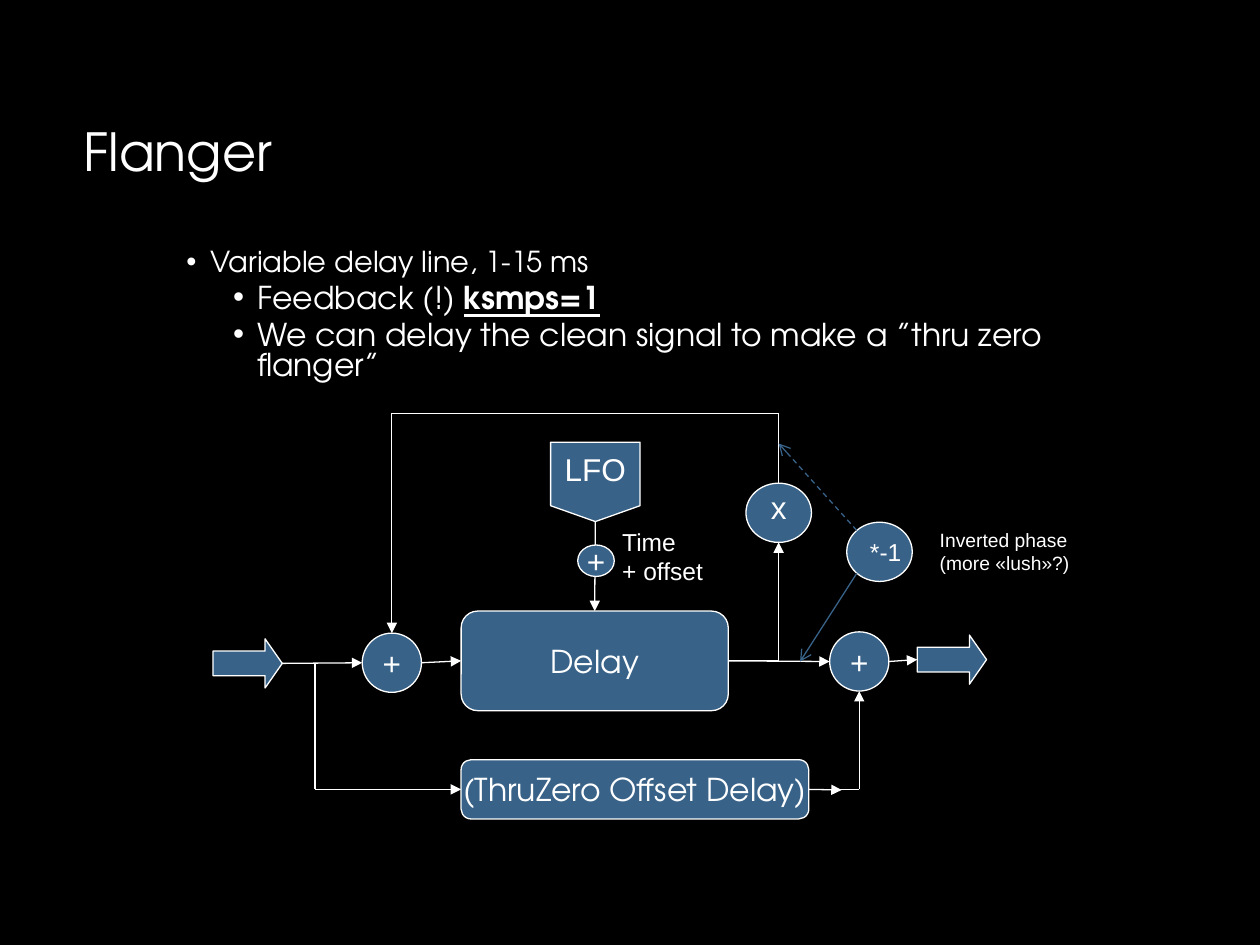
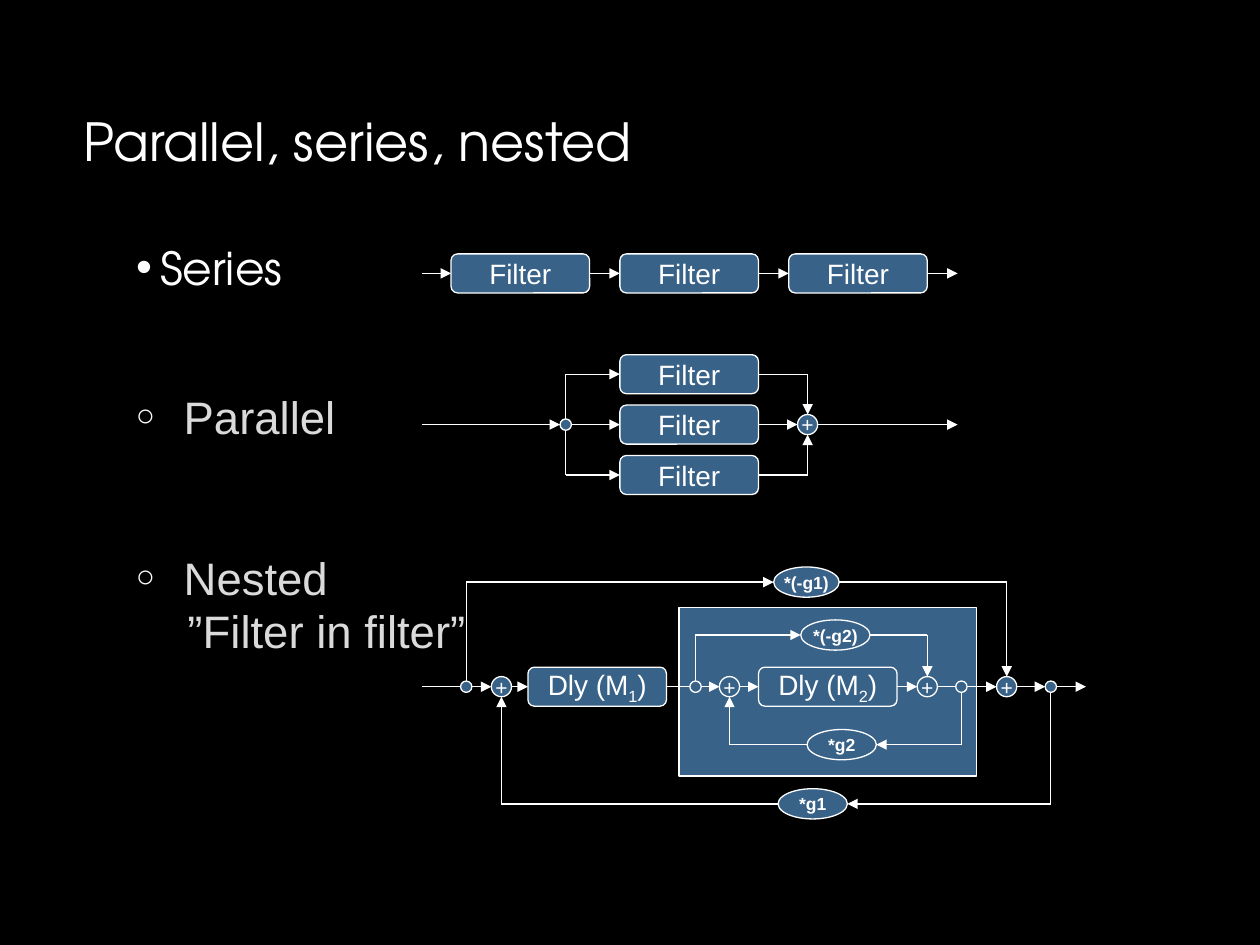
from lxml import etree
from pptx import Presentation
from pptx.dml.color import RGBColor
from pptx.enum.dml import MSO_LINE
from pptx.enum.shapes import MSO_CONNECTOR, MSO_SHAPE
from pptx.enum.text import MSO_ANCHOR, MSO_AUTO_SIZE, PP_ALIGN
from pptx.oxml.ns import qn
from pptx.util import Emu, Pt

PX = 9144
COLORS = {"back": "000000", "ink": "FFFFFF", "blue": "386288", "pale": "DADADA"}
SANS = "Arial"
GEO = "TeX Gyre Adventor"
RECT = MSO_SHAPE.RECTANGLE
ROUND = MSO_SHAPE.ROUNDED_RECTANGLE
DISC = MSO_SHAPE.FLOWCHART_CONNECTOR
ARROW = MSO_SHAPE.RIGHT_ARROW
PAGE = MSO_SHAPE.FLOWCHART_OFFPAGE_CONNECTOR
STRAIGHT = MSO_CONNECTOR.STRAIGHT
DASH = MSO_LINE.DASH
LEFT = PP_ALIGN.LEFT
CENTER = PP_ALIGN.CENTER
MIDDLE = MSO_ANCHOR.MIDDLE
TOP = MSO_ANCHOR.TOP
FIXED = MSO_AUTO_SIZE.NONE
NORTH, WEST, SOUTH, EAST = range(4)


def px(*values):
    return [Emu(round(value * PX)) for value in values]


def rgb(name):
    return RGBColor.from_string(COLORS[name])


def write(par, text, size=18, face=SANS, color="ink", bold=False, under=False, base=0):
    run = par.add_run()
    run.text = text
    font = run.font
    font.size = Pt(size)
    font.name = face
    font.bold = bold
    font.underline = under
    font.color.rgb = rgb(color)
    if base:
        font._element.set("baseline", str(base * 1000))


def place(shape, area):
    shape.left, shape.top, shape.width, shape.height = px(*area)


def head(slide, text, top):
    title = slide.shapes.title
    place(title, (56, top, 888, 141))
    title.text_frame.vertical_anchor = MIDDLE
    title.text_frame.auto_size = FIXED
    par = title.text_frame.paragraphs[0]
    par.alignment = LEFT
    par.line_spacing = 0.9
    write(par, text, size=30, face=GEO)


def body(slide, area):
    holder = slide.placeholders[1]
    place(holder, area)
    frame = holder.text_frame
    frame.word_wrap = True
    frame.auto_size = FIXED
    frame.vertical_anchor = TOP
    return frame


def note(slide, area):
    frame = slide.shapes.add_textbox(*px(*area)).text_frame
    frame.word_wrap = True
    return frame


def item(par, left, hang, mark=None, scale=100, level=0, gap=0):
    props = par._p.get_or_add_pPr()
    props.set("marL", str(left * PX))
    props.set("indent", str(-hang * PX))
    if mark:
        tint = etree.SubElement(props, qn("a:buClr"))
        etree.SubElement(tint, qn("a:srgbClr")).set("val", COLORS["ink"])
        etree.SubElement(props, qn("a:buSzPct")).set("val", str(scale * 1000))
        etree.SubElement(props, qn("a:buFont")).set("typeface", SANS)
        etree.SubElement(props, qn("a:buChar")).set("char", mark)
    par.level = level
    par.line_spacing = 0.8
    par.space_before = Pt(gap)
    return par


def node(slide, kind, area, label="", pad=(0, 0, 0, 0), **form):
    shape = slide.shapes.add_shape(kind, *px(*area))
    shape.shadow.inherit = False
    shape.fill.solid()
    shape.fill.fore_color.rgb = rgb("blue")
    shape.line.color.rgb = rgb("ink")
    shape.line.width = Pt(0.75)
    if label:
        frame = shape.text_frame
        frame.word_wrap = False
        frame.vertical_anchor = MIDDLE
        sides = px(*pad)
        frame.margin_left, frame.margin_top, frame.margin_right, frame.margin_bottom = sides
        par = frame.paragraphs[0]
        par.alignment = CENTER
        write(par, label, **form)
    return shape


def disc(slide, x, y, wide, high, label="", **form):
    return node(slide, DISC, (x - wide / 2, y - high / 2, wide, high), label, **form)


def dot(slide, x, y):
    return disc(slide, x, y, 9, 9)


def plus(slide, x, y):
    return disc(slide, x, y, 16, 16, "+", size=12)


def gain(slide, x, y, label, wide=55):
    return disc(slide, x, y, wide, 24, label, size=10, bold=True)


def pipe(slide, x, y, label):
    return node(slide, ROUND, (x, y - 15.5, 110, 31), label, size=16)


def stage(slide, x, y, sub):
    shape = pipe(slide, x, y, "Dly (M")
    par = shape.text_frame.paragraphs[0]
    write(par, sub, size=16, base=-25)
    write(par, ")", size=16)
    return shape


def spot(end):
    part, side = end
    if isinstance(part, int):
        return tuple(px(part, side))
    mid_x = part.left + part.width // 2
    mid_y = part.top + part.height // 2
    return {
        NORTH: (mid_x, part.top),
        WEST: (part.left, mid_y),
        SOUTH: (mid_x, part.top + part.height),
        EAST: (part.left + part.width, mid_y),
    }[side]


def boxed(end):
    return not isinstance(end[0], int) and end[0].auto_shape_type == ROUND


def wire(slide, start, stop, via=None, tip="triangle", color="ink", dash=None):
    (ax, ay), (bx, by) = spot(start), spot(stop)
    if via is None:
        turns = []
    elif via == "flat":
        turns = [(bx, ay)]
    elif via == "tall":
        turns = [(ax, by)]
    else:
        turns = [(ax, via * PX), (bx, via * PX)]
    points = [(ax, ay), *turns, (bx, by)]
    links = []
    for a, b in zip(points, points[1:]):
        link = slide.shapes.add_connector(STRAIGHT, *map(Emu, a + b))
        link.line.color.rgb = rgb(color)
        link.line.width = Pt(0.75)
        if dash:
            link.line.dash_style = dash
        etree.SubElement(link._element.spPr, qn("a:effectLst"))
        links.append(link)
    if tip:
        line = links[-1].line._get_or_add_ln()
        etree.SubElement(line, qn("a:tailEnd")).set("type", tip)
    if boxed(start):
        links[0].begin_connect(*start)
    if boxed(stop):
        links[-1].end_connect(*stop)


def chain(slide, *parts):
    for a, b in zip(parts, parts[1:]):
        wire(slide, (a, EAST), (b, WEST))


def flanger(slide):
    head(slide, "Flanger", 52)
    frame = body(slide, (138, 194, 756, 118))
    par = item(frame.paragraphs[0], 19, 19, "•")
    write(par, "Variable delay line, 1-15 ms", size=16.5, face=GEO)
    par = item(frame.add_paragraph(), 56, 19, "•", level=1, gap=3.8)
    write(par, "Feedback (!) ", face=GEO)
    write(par, "ksmps=1", face=GEO, bold=True, under=True)
    par = item(frame.add_paragraph(), 56, 19, "•", level=1, gap=3.8)
    write(par, "We can delay the clean signal to make a ”thru zero flanger”", face=GEO)

    delay = node(slide, ROUND, (366, 485, 212, 79), "Delay", face=GEO)
    zero = node(slide, ROUND, (366, 603, 276, 47), "(ThruZero Offset Delay)", face=GEO)
    mix = disc(slide, 311, 526, 47, 47, "+")
    out = disc(slide, 682, 525, 47, 47, "+")
    times = disc(slide, 618, 407, 52, 47, "x", pad=(0, 0, 0, 9))
    disc(slide, 698, 438, 52, 47, "*-1", pad=(10, 0, 0, 0), size=14)
    lfo = node(slide, PAGE, (437, 351, 71, 63), "LFO", pad=(0, 0, 0, 8))
    ports = [node(slide, ARROW, (x, y, 55, 39)) for x, y in ((169, 507), (728, 504))]
    for port in ports:
        port.adjustments[1] = 0.349

    chain(slide, ports[0], mix, delay, out, ports[1])
    wire(slide, (250, 527), (zero, WEST), via="tall")
    wire(slide, (zero, EAST), (668, 627))
    wire(slide, (zero, EAST), (out, SOUTH), via="flat")
    wire(slide, (delay, EAST), (times, SOUTH), via="flat")
    wire(slide, (times, NORTH), (mix, NORTH), via=328)
    wire(slide, (lfo, SOUTH), (delay, NORTH))
    disc(slide, 473, 445, 29, 25, "+")
    wire(slide, (680, 455), (635, 525), tip="arrow", color="blue")
    wire(slide, (680, 421), (618, 352), tip="arrow", color="blue", dash=DASH)

    for area, size, lines in (
        ((484, 413, 84, 57), 14, ("Time", "+ offset")),
        ((736, 414, 205, 47), 11, ("Inverted phase", "(more «lush»?)")),
    ):
        frame = note(slide, area)
        write(frame.paragraphs[0], lines[0], size=size)
        write(frame.add_paragraph(), lines[1], size=size)


def series(slide):
    y = 217
    pipes = [pipe(slide, 358 + 134 * i, y, "Filter") for i in range(3)]
    wire(slide, (335, y), (pipes[0], WEST))
    chain(slide, *pipes)
    wire(slide, (pipes[-1], EAST), (760, y))


def fan(slide):
    y = 337
    split = dot(slide, 449, y)
    join = plus(slide, 641, y)
    high, mid, low = [pipe(slide, 492, y + 40 * i - 40, "Filter") for i in range(3)]
    wire(slide, (335, y), (split, WEST))
    chain(slide, split, mid, join)
    for part, side in ((high, NORTH), (low, SOUTH)):
        wire(slide, (split, side), (part, WEST), via="tall")
        wire(slide, (part, EAST), (join, side), via="flat")
    wire(slide, (join, EAST), (760, y))


def nest(slide):
    y = 545
    node(slide, RECT, (539, 482, 236, 134))
    taps = [dot(slide, x, y) for x in (370, 552, 763, 834)]
    sums = [plus(slide, x, y) for x in (398, 579, 736, 799)]
    outer = stage(slide, 419, y, "1")
    inner = stage(slide, 602, y, "2")
    wire(slide, (335, y), (taps[0], WEST), tip=None)
    chain(slide, taps[0], sums[0], outer)
    wire(slide, (outer, EAST), (taps[1], WEST), tip=None)
    chain(slide, taps[1], sums[1], inner, sums[2])
    wire(slide, (sums[2], EAST), (taps[2], WEST), tip=None)
    chain(slide, taps[2], sums[3], taps[3])
    wire(slide, (taps[3], EAST), (862, y))

    ahead = (
        (gain(slide, 640, 462, "*(-g1)", 52), taps[0], sums[3]),
        (gain(slide, 663, 504, "*(-g2)"), taps[1], sums[2]),
    )
    for part, tap, total in ahead:
        wire(slide, (tap, NORTH), (part, WEST), via="tall")
        wire(slide, (part, EAST), (total, NORTH), via="flat")
    back = (
        (gain(slide, 645, 638, "*g1"), taps[3], sums[0]),
        (gain(slide, 668, 591, "*g2"), taps[2], sums[1]),
    )
    for part, tap, total in back:
        wire(slide, (tap, SOUTH), (part, EAST), via="tall")
        wire(slide, (part, WEST), (total, SOUTH), via="flat")


def layouts(slide):
    head(slide, "Parallel, series, nested", 44)
    frame = body(slide, (98, 194, 173, 49))
    write(item(frame.paragraphs[0], 19, 19, "•"), "Series", size=26, face=GEO)
    for text, area in (("Parallel", (98, 312, 220, 49)), ("Nested", (98, 440, 346, 94))):
        frame = note(slide, area)
        par = item(frame.paragraphs[0], 38, 38, "○", scale=70)
        write(par, text, size=26, color="pale")
    par = item(frame.add_paragraph(), 41, 0, gap=5.2)
    write(par, "”Filter in filter”", size=26, color="pale")
    series(slide)
    fan(slide)
    nest(slide)


def main():
    deck = Presentation()
    deck.slide_width, deck.slide_height = px(1000, 750)
    fill = deck.slide_master.background.fill
    fill.solid()
    fill.fore_color.rgb = rgb("back")
    for draw in (flanger, layouts):
        draw(deck.slides.add_slide(deck.slide_layouts[1]))
    deck.save("out.pptx")


if __name__ == "__main__":
    main()
